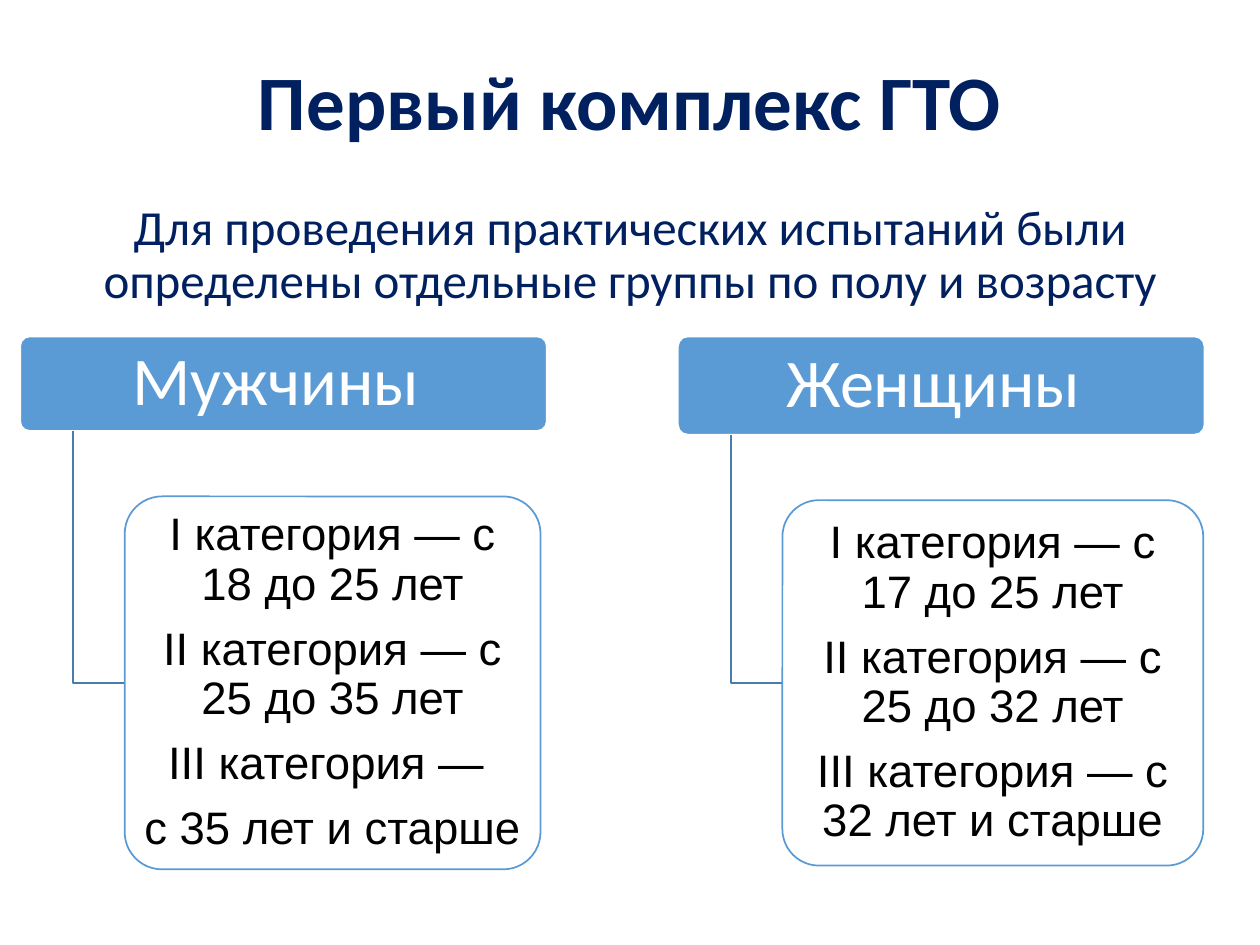
"""Build the slide on the sex and age groups of the first GTO complex."""
from dataclasses import dataclass

from lxml.etree import SubElement
from pptx import Presentation
from pptx.dml.color import RGBColor as Rgb
from pptx.enum.shapes import MSO_SHAPE as Kind
from pptx.enum.text import MSO_ANCHOR as Anchor, MSO_AUTO_SIZE as Fit, PP_ALIGN as Align
from pptx.oxml.ns import qn
from pptx.util import Inches, Pt


@dataclass(frozen=True)
class Theme:
    navy: str = "002060"
    blue: str = "5B9BD5"
    steel: str = "497CAB"
    white: str = "FFFFFF"
    black: str = "000000"
    head: str = "Calibri"
    plain: str = "Arial"
    title: int = 44
    lead: int = 28
    group: int = 39
    item: int = 26


LOOK = Theme()
TITLE = "Первый комплекс ГТО"
LEAD = "Для проведения практических испытаний были определены отдельные группы по полу и возрасту "
GROUPS = [
    {"name": "Мужчины ", "head": 0.75, "card": (3.3, 2.96), "items": [
        "I категория — с 18 до 25 лет",
        "II категория — с 25 до 35 лет",
        "III категория — ",
        "с 35 лет и старше"]},
    {"name": "Женщины ", "head": 0.78, "card": (3.34, 2.9), "items": [
        "I категория — с 17 до 25 лет",
        "II категория — с 25 до 32 лет",
        "III категория — с 32 лет и старше"]},
]
WIDE, HIGH = 10, 7.5
EDGE, STEP, TOP, SPAN = 0.16, 5.22, 2.67, 4.18
STEM, INDENT, MID = 0.42, 0.83, 5.42


def write(shape, lines, font, size, color, bold=False, after=0, anchor=Anchor.MIDDLE):
    frame = shape.text_frame
    frame.text = "\n".join(lines)
    frame.word_wrap, frame.auto_size = True, Fit.NONE
    frame.vertical_anchor = anchor
    for para in frame.paragraphs:
        para.alignment, para.line_spacing = Align.CENTER, 0.9
        para.space_before, para.space_after = Pt(0), Pt(after)
        for run in para.runs:
            run.font.name, run.font.size, run.font.bold = font, Pt(size), bold
            run.font.color.rgb = Rgb.from_string(color)


def place(shape, *box):
    shape.left, shape.top, shape.width, shape.height = map(Inches, box)


def panel(slide, box, fill, line, pad):
    shape = slide.shapes.add_shape(Kind.ROUNDED_RECTANGLE, *map(Inches, box))
    shape.adjustments[0] = 0.1
    shape.shadow.inherit = False
    shape.fill.solid()
    shape.fill.fore_color.rgb = Rgb.from_string(fill)
    shape.line.color.rgb = Rgb.from_string(line)
    shape.line.width = Pt(1)
    frame = shape.text_frame
    frame.margin_left = frame.margin_right = Inches(pad[0])
    frame.margin_top = frame.margin_bottom = Inches(pad[1])
    return shape


def elbow(slide, left, top, right, low):
    path = slide.shapes.build_freeform(Inches(left), Inches(top))
    path.add_line_segments([(Inches(left), Inches(low)), (Inches(right), Inches(low))], close=False)
    shape = path.convert_to_shape()
    shape.shadow.inherit = False
    shape.fill.background()
    shape.line.color.rgb = Rgb.from_string(LOOK.steel)
    shape.line.width = Pt(1)


def branch(slide, col, group):
    left = EDGE + col * STEP
    head = panel(slide, (left, TOP, SPAN, group["head"]), LOOK.blue, LOOK.white, (0.08, 0.05))
    write(head, [group["name"]], LOOK.head, LOOK.group, LOOK.white)
    wide, high = group["card"]
    near = left + INDENT
    elbow(slide, left + STEM, TOP + group["head"], near, MID)
    card = panel(slide, (near, MID - high / 2, wide, high), LOOK.white, LOOK.blue, (0.05, 0.04))
    tint = card.fill.fore_color._xFill.find(qn("a:srgbClr"))
    SubElement(tint, qn("a:alpha"), val="90000")
    write(card, group["items"], LOOK.plain, LOOK.item, LOOK.black, after=0.35 * LOOK.item)


def main():
    deck = Presentation()
    deck.slide_width, deck.slide_height = Inches(WIDE), Inches(HIGH)
    slide = deck.slides.add_slide(deck.slide_layouts[1])
    title, lead = slide.placeholders
    place(title, 0.69, 0.11, 8.62, 1.45)
    place(lead, 0.69, 1.56, 8.62, 1.02)
    write(title, [TITLE], LOOK.head, LOOK.title, LOOK.navy, bold=True)
    lead.text_frame.text = LEAD
    write(lead, [LEAD], LOOK.head, LOOK.lead, LOOK.navy, anchor=Anchor.TOP)
    props = lead.text_frame.paragraphs[0]._p.get_or_add_pPr()
    props.set("marL", "0")
    props.set("indent", "0")
    SubElement(props, qn("a:buNone"))
    for col, group in enumerate(GROUPS):
        branch(slide, col, group)
    deck.save("out.pptx")


if __name__ == "__main__":
    main()
